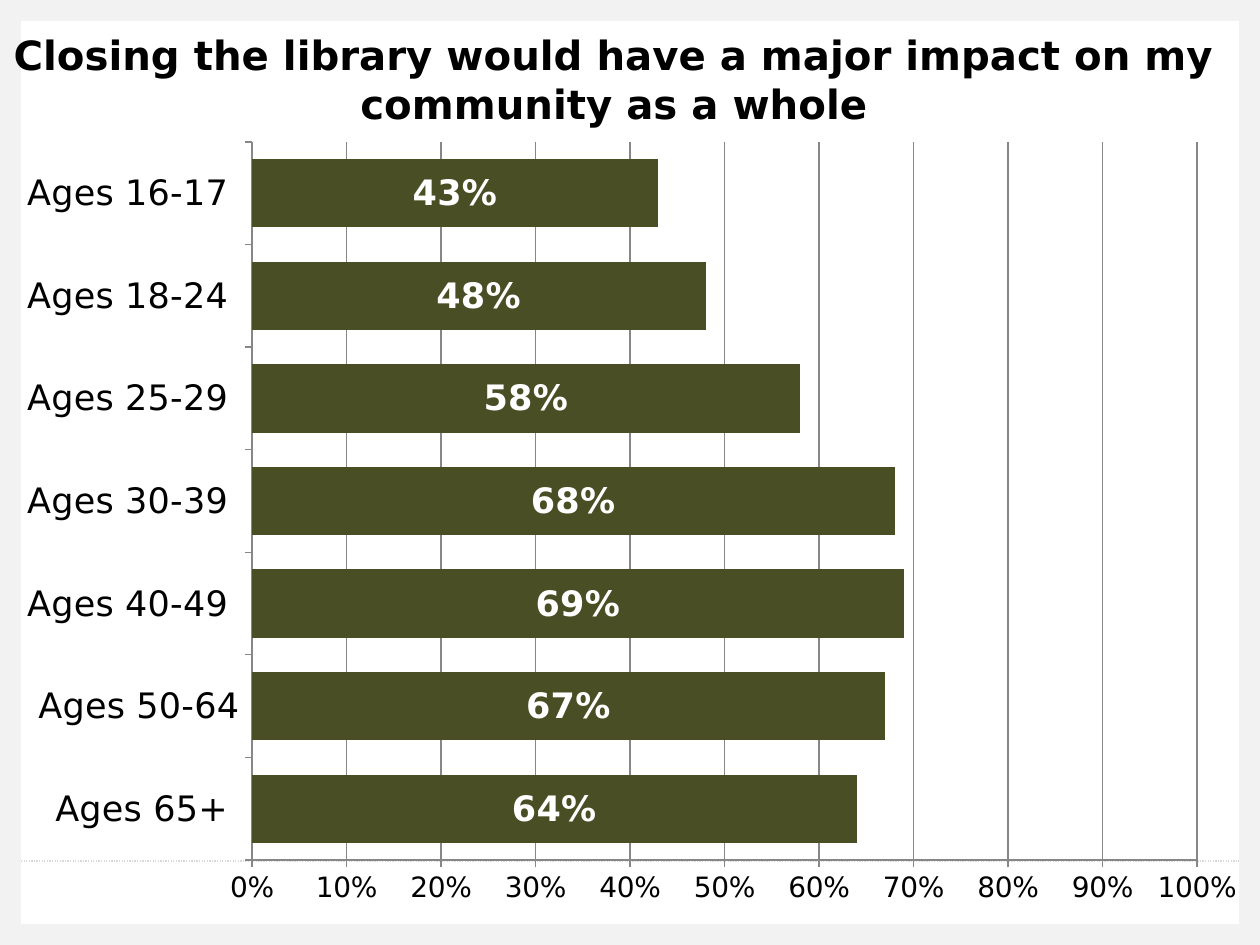
"""Build a slide with a bar chart of how each age group rates a library closing."""
from typing import NamedTuple

from lxml import etree
from pptx import Presentation
from pptx.chart.data import CategoryChartData
from pptx.dml.color import RGBColor
from pptx.enum.chart import XL_CHART_TYPE, XL_LABEL_POSITION, XL_TICK_MARK
from pptx.enum.dml import MSO_LINE
from pptx.enum.shapes import MSO_CONNECTOR, MSO_SHAPE
from pptx.enum.text import MSO_ANCHOR, PP_ALIGN
from pptx.oxml import parse_xml
from pptx.oxml.ns import nsdecls, qn
from pptx.util import Pt

STACKED_BARS = XL_CHART_TYPE.BAR_STACKED
LABEL_CENTER = XL_LABEL_POSITION.CENTER
TICK_OUTSIDE = XL_TICK_MARK.OUTSIDE
TICK_NONE = XL_TICK_MARK.NONE
DOTTED = MSO_LINE.ROUND_DOT
STRAIGHT = MSO_CONNECTOR.STRAIGHT
RECTANGLE = MSO_SHAPE.RECTANGLE
MIDDLE = MSO_ANCHOR.MIDDLE
CENTER = PP_ALIGN.CENTER

BLACK = RGBColor(0x00, 0x00, 0x00)
WHITE = RGBColor(0xFF, 0xFF, 0xFF)
OLIVE = RGBColor(0x4A, 0x4E, 0x24)
BORDER_GRAY = RGBColor(0xF2, 0xF2, 0xF2)
RULE_GRAY = RGBColor(0xD9, 0xD9, 0xD9)
AXIS_GRAY = RGBColor(0x87, 0x87, 0x87)

FONT = "DejaVu Sans"
SLIDE_WIDTH, SLIDE_HEIGHT, BORDER = 720, 540, 12
PERCENT = "0%"


class Box(NamedTuple):
    left: float
    top: float
    width: float
    height: float

    def lengths(self):
        return [Pt(value) for value in self]


class AgeGroup(NamedTuple):
    label: str
    share: float


BORDERS = [
    Box(0, 0, BORDER, SLIDE_HEIGHT),
    Box(SLIDE_WIDTH - BORDER, 0, BORDER, SLIDE_HEIGHT),
    Box(BORDER, 0, SLIDE_WIDTH - BORDER, BORDER),
    Box(BORDER, SLIDE_HEIGHT - BORDER, SLIDE_WIDTH - BORDER, BORDER),
]
AGE_GROUPS = [
    AgeGroup("Ages 65+ ", 0.64),
    AgeGroup("Ages 50-64", 0.67),
    AgeGroup("Ages 40-49 ", 0.69),
    AgeGroup("Ages 30-39 ", 0.68),
    AgeGroup("Ages 25-29 ", 0.58),
    AgeGroup("Ages 18-24 ", 0.48),
    AgeGroup("Ages 16-17 ", 0.43),
]
PLOT_FRACTIONS = {"x": 0.2, "y": 0.02, "w": 0.75, "h": 0.9}


def style_font(font, size: float, color: RGBColor = BLACK, bold: bool = False) -> None:
    font.name = FONT
    font.size = Pt(size)
    font.bold = bold
    font.color.rgb = color


def add_border(slide, box: Box) -> None:
    border = slide.shapes.add_shape(RECTANGLE, *box.lengths())
    border.shadow.inherit = False
    border.fill.solid()
    border.fill.fore_color.rgb = BORDER_GRAY
    border.line.fill.background()


def add_footer_rule(slide, top: float) -> None:
    rule = slide.shapes.add_connector(
        STRAIGHT, Pt(BORDER), Pt(top), Pt(SLIDE_WIDTH - BORDER), Pt(top))
    rule.line.color.rgb = RULE_GRAY
    rule.line.width = Pt(0.75)
    rule.line.dash_style = DOTTED
    etree.SubElement(rule._element.spPr, qn("a:effectLst"))


def add_text(slide, text: str, box: Box, *, size: float, color: RGBColor = BLACK,
             bold: bool = False, align=CENTER, anchor=MIDDLE) -> None:
    frame = slide.shapes.add_textbox(*box.lengths()).text_frame
    frame.word_wrap = True
    frame.vertical_anchor = anchor
    paragraph = frame.paragraphs[0]
    paragraph.alignment = align
    run = paragraph.add_run()
    run.text = text
    style_font(run.font, size, color, bold)


def style_axis(axis, size: float) -> None:
    style_font(axis.tick_labels.font, size)
    axis.major_tick_mark = TICK_OUTSIDE
    axis.minor_tick_mark = TICK_NONE
    axis.format.line.color.rgb = AXIS_GRAY
    axis.format.line.width = Pt(0.75)


def fix_plot_area(chart, fractions: dict[str, float]) -> None:
    modes = "".join(f'<c:{axis}Mode val="edge"/>' for axis in "xy")
    places = "".join(f'<c:{key} val="{value}"/>' for key, value in fractions.items())
    layout = parse_xml(
        f'<c:layout {nsdecls("c")}><c:manualLayout><c:layoutTarget val="inner"/>'
        f"{modes}{places}</c:manualLayout></c:layout>")
    plot_area = chart._chartSpace.chart.plotArea
    for automatic in plot_area.findall(qn("c:layout")):
        plot_area.remove(automatic)
    plot_area.insert(0, layout)


def add_age_chart(slide, groups: list[AgeGroup], box: Box) -> None:
    shares = CategoryChartData(number_format=PERCENT)
    shares.categories = [group.label for group in groups]
    shares.add_series("Series 1", [group.share for group in groups])
    chart = slide.shapes.add_chart(STACKED_BARS, *box.lengths(), shares).chart
    chart.has_legend = False
    chart.has_title = False
    style_font(chart.font, 10)
    fix_plot_area(chart, PLOT_FRACTIONS)

    style_axis(chart.category_axis, 20)
    share_axis = chart.value_axis
    style_axis(share_axis, 16)
    share_axis.minimum_scale, share_axis.maximum_scale = 0, 1
    share_axis.major_unit = 0.1
    share_axis.tick_labels.number_format = PERCENT
    share_axis.tick_labels.number_format_is_linked = False
    share_axis.has_major_gridlines = True
    share_axis.major_gridlines.format.line.color.rgb = AXIS_GRAY
    share_axis.major_gridlines.format.line.width = Pt(0.75)

    bars = chart.plots[0]
    bars.gap_width, bars.overlap = 50, 100
    bars.vary_by_categories = False
    series = bars.series[0]
    series.format.fill.solid()
    series.format.fill.fore_color.rgb = OLIVE
    labels = series.data_labels
    labels.show_value = True
    labels.position = LABEL_CENTER
    labels.number_format = PERCENT
    labels.number_format_is_linked = False
    style_font(labels.font, 20, WHITE, bold=True)


def main() -> None:
    deck = Presentation()
    deck.slide_width, deck.slide_height = Pt(SLIDE_WIDTH), Pt(SLIDE_HEIGHT)
    slide = deck.slides.add_slide(deck.slide_layouts[6])
    slide.background.fill.solid()
    slide.background.fill.fore_color.rgb = WHITE
    for border in BORDERS:
        add_border(slide, border)
    add_footer_rule(slide, 492)
    add_text(slide, "Closing the library would have a major impact on my community as a whole",
             Box(0, 0, 702, 90), size=23, bold=True)
    add_age_chart(slide, AGE_GROUPS, Box(0, 72, 720, 456))
    deck.save("out.pptx")


if __name__ == "__main__":
    main()
